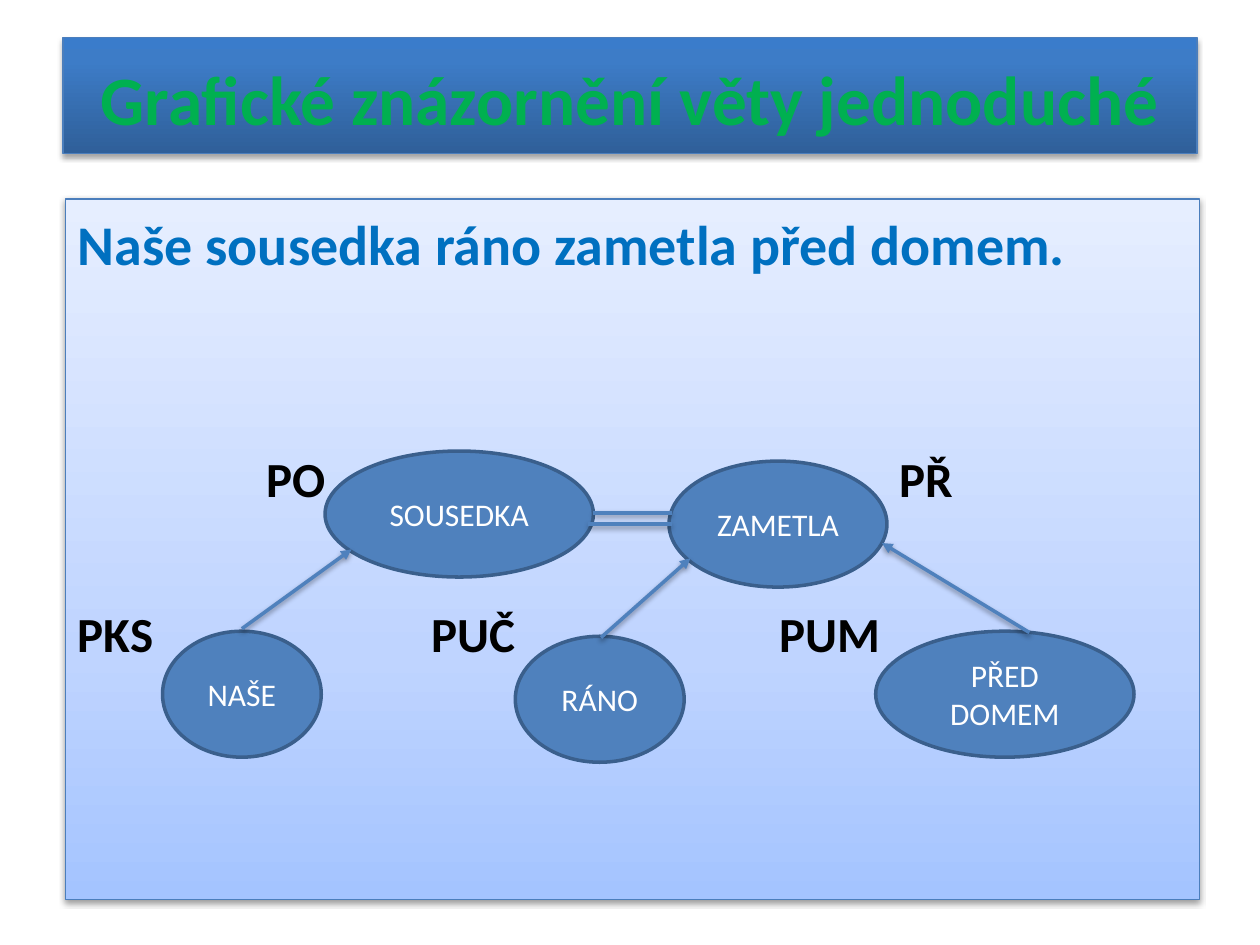
from copy import deepcopy
from dataclasses import dataclass

from lxml.etree import SubElement
from pptx import Presentation
from pptx.dml.color import RGBColor
from pptx.enum.shapes import MSO_CONNECTOR as Connector, MSO_SHAPE as Shape
from pptx.enum.text import MSO_ANCHOR as Anchor, PP_ALIGN as Align
from pptx.oxml.ns import qn
from pptx.slide import Slide
from pptx.util import Inches, Pt

WHITE = RGBColor(0xFF, 0xFF, 0xFF)
BLACK = RGBColor(0, 0, 0)
GREEN = RGBColor(0x00, 0xB0, 0x50)
BLUE = RGBColor(0x00, 0x70, 0xC0)
NODE_FILL = RGBColor(0x4F, 0x81, 0xBD)
NODE_LINE = RGBColor(0x3A, 0x5F, 0x8C)
PANEL_LINE = RGBColor(0x4B, 0x7E, 0xBC)
TITLE_STOPS = [
    (0, RGBColor(0x2F, 0x5F, 0x99)),
    (0.8, RGBColor(0x3D, 0x7C, 0xC7)),
    (1, RGBColor(0x3A, 0x7C, 0xCB)),
]
BODY_STOPS = [
    (0, RGBColor(0xA4, 0xC4, 0xFF)),
    (0.35, RGBColor(0xBF, 0xD4, 0xFF)),
    (1, RGBColor(0xE6, 0xEE, 0xFF)),
]


@dataclass
class SentenceDiagram:
    """Draws on a slide divided into 100 columns and 75 rows."""

    slide: Slide
    cell: int = Inches(0.1)
    font: str = "Calibri"

    def grid(self, *cells):
        return [round(value * self.cell) for value in cells]

    def shadow(self, properties, opacity=38, offset=1.6):
        effects = SubElement(properties, qn("a:effectLst"))
        outer = SubElement(effects, qn("a:outerShdw"), blurRad=str(Pt(3.1)),
                           dist=str(Pt(offset)), dir="5400000", rotWithShape="0")
        color = SubElement(outer, qn("a:srgbClr"), val=str(BLACK))
        SubElement(color, qn("a:alpha"), val=str(opacity * 1000))

    def outline(self, line, color, width):
        line.color.rgb = color
        line.width = Pt(width)

    def text_line(self, paragraph, text, tabs=(), before=0, align=Align.LEFT, **formats):
        paragraph.alignment = align
        paragraph.space_before = Pt(before)
        if tabs:
            stops = SubElement(paragraph._p.get_or_add_pPr(), qn("a:tabLst"))
            for position in self.grid(*tabs):
                SubElement(stops, qn("a:tab"), pos=str(position), algn="l")
        run = paragraph.add_run()
        run.text = text
        color = formats.pop("color")
        for name, value in {"name": self.font, **formats}.items():
            setattr(run.font, name, value)
        run.font.color.rgb = color

    def panel(self, box, stops, anchor, lines, **shadow):
        shape = self.slide.shapes.add_shape(Shape.RECTANGLE, *self.grid(*box))
        shape.fill.gradient()
        shape.fill.gradient_angle = 90
        properties = shape._element.spPr
        stop_list = properties.find(".//" + qn("a:gsLst"))
        stop_list.append(deepcopy(stop_list[0]))
        for stop, (position, color) in zip(shape.fill.gradient_stops, stops):
            stop.position = position
            stop.color.rgb = color
        self.outline(shape.line, PANEL_LINE, 0.75)
        self.shadow(properties, **shadow)
        frame = shape.text_frame
        settings = {"word_wrap": True, "vertical_anchor": anchor, "margin_top": Inches(0.08)}
        for name, value in settings.items():
            setattr(frame, name, value)
        for index, line in enumerate(lines):
            paragraph = frame.add_paragraph() if index else frame.paragraphs[0]
            self.text_line(paragraph, **line)

    def node(self, text, *box):
        shape = self.slide.shapes.add_shape(Shape.OVAL, *self.grid(*box))
        shape.shadow.inherit = False
        shape.fill.solid()
        shape.fill.fore_color.rgb = NODE_FILL
        self.outline(shape.line, NODE_LINE, 2)
        shape.text_frame.word_wrap = True
        shape.text_frame.vertical_anchor = Anchor.MIDDLE
        self.text_line(shape.text_frame.paragraphs[0], text, align=Align.CENTER,
                       size=Pt(18), color=WHITE)

    def link(self, *ends, arrow=False):
        connector = self.slide.shapes.add_connector(Connector.STRAIGHT, *self.grid(*ends))
        self.outline(connector.line, NODE_FILL, 2)
        if arrow:
            SubElement(connector.line._get_or_add_ln(), qn("a:tailEnd"), type="triangle")
        self.shadow(connector._element.spPr)


def main():
    presentation = Presentation()
    presentation.slide_width, presentation.slide_height = Inches(10), Inches(7.5)
    diagram = SentenceDiagram(presentation.slides.add_slide(presentation.slide_layouts[6]))

    title = {"text": "Grafické znázornění věty jednoduché", "align": Align.CENTER,
             "size": Pt(39.6), "bold": True, "color": GREEN}
    diagram.panel((5, 3, 90, 9.2), TITLE_STOPS, Anchor.MIDDLE, [title],
                  opacity=35, offset=1.8)

    label = {"size": Pt(28), "bold": True, "color": BLACK}
    sentence = {"text": "Naše sousedka ráno zametla před domem.",
                "size": Pt(32), "bold": True, "color": BLUE}
    diagram.panel((5.2, 15.8, 90, 55.6), BODY_STOPS, Anchor.TOP, [
        sentence,
        {"text": "\tPO\tPŘ", "tabs": (15, 65.2), "before": 98.4, **label},
        {"text": "PKS\tPUČ\tPUM", "tabs": (28.1, 55.7), "before": 55, **label},
    ])

    for text, left, top, width in [
        ("SOUSEDKA", 25.8, 35.8, 21.3),
        ("ZAMETLA", 53.1, 36.6, 17.3),
        ("NAŠE", 12.9, 50.1, 12.6),
        ("RÁNO", 40.9, 50.5, 13.4),
        ("PŘED DOMEM", 69.5, 50.1, 20.5),
    ]:
        diagram.node(text, left, top, width, 10)

    for left, row in [(47.1, 40.7), (46.7, 41.6)]:
        diagram.link(left, row, 53.3, row)
    for ends in [(19.2, 49.9, 27.9, 43.6), (47.7, 50.6, 54.8, 44.3), (81.7, 50.2, 70, 43.1)]:
        diagram.link(*ends, arrow=True)

    presentation.save("out.pptx")


if __name__ == "__main__":
    main()
